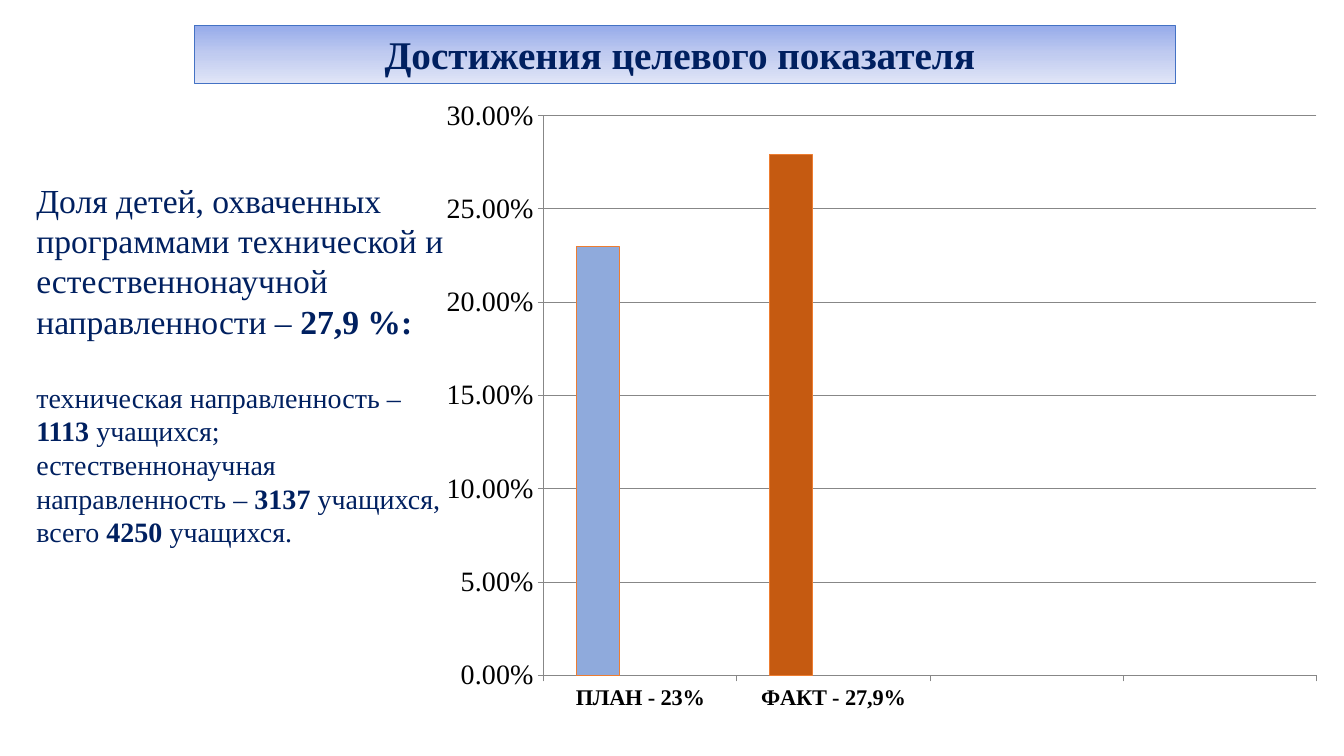
"""Builds the slide comparing the planned and actual share of children in technical programmes."""
from copy import deepcopy

from lxml.etree import SubElement
from pptx import Presentation
from pptx.chart.data import CategoryChartData
from pptx.dml.color import RGBColor
from pptx.enum.chart import XL_CHART_TYPE as ChartType, XL_TICK_MARK as TickMark
from pptx.enum.text import MSO_ANCHOR as Anchor, MSO_AUTO_SIZE as AutoSize, PP_ALIGN as Align
from pptx.oxml import parse_xml
from pptx.oxml.ns import nsdecls, qn
from pptx.util import Cm, Pt

SERIF = "Times New Roman"
NAVY = "002060"


def rgb(hex_color):
    return RGBColor.from_string(hex_color)


def style(font, size, color, bold=False):
    font.name, font.size, font.bold = SERIF, Pt(size), bold
    font.color.rgb = rgb(color)


deck = Presentation()
deck.slide_width, deck.slide_height = Cm(33.87), Cm(19.05)
slide = deck.slides.add_slide(deck.slide_layouts[1])
heading, summary = slide.placeholders

heading.left, heading.top, heading.width, heading.height = Cm(4.9), Cm(0.64), Cm(24.71), Cm(1.45)
heading.fill.gradient()
heading.fill.gradient_angle = 270
stop_list = heading.element.spPr.find(".//" + qn("a:gsLst"))
stop_list.insert(1, deepcopy(stop_list[0]))
for stop, position, color in zip(heading.fill.gradient_stops, (0, 0.5, 1), ("96ABEA", "C0CBF0", "E0E5F7")):
    stop.position = position
    stop.color.rgb = rgb(color)
heading.line.color.rgb = rgb("4472C4")
heading.line.width = Pt(0.5)
heading.text_frame.text = "Достижения целевого показателя "
heading.text_frame.auto_size = AutoSize.NONE
heading.text_frame.vertical_anchor = Anchor.MIDDLE
heading.text_frame.paragraphs[0].alignment = Align.CENTER
style(heading.text_frame.paragraphs[0].runs[0].font, 28, NAVY, True)

summary.left, summary.top, summary.width, summary.height = Cm(0.66), Cm(4.4), Cm(11.33), Cm(9.65)
summary.text_frame.auto_size = AutoSize.NONE
summary.text_frame.word_wrap = True
summary_lines = [
    (24, 0, [("Доля детей, охваченных программами технической и естественнонаучной направленности – ", False),
             ("27,9 %:", True)]),
    (20, 28, [("техническая направленность –", False)]),
    (20, 0, [("1113 ", True), ("учащихся;", False)]),
    (20, 0, [("естественнонаучная направленность – ", False), ("3137", True), (" учащихся,", False)]),
    (20, 0, [("всего ", False), ("4250", True), (" учащихся.", False)]),
]
for index, (size, gap_before, pieces) in enumerate(summary_lines):
    line = summary.text_frame.paragraphs[0] if index == 0 else summary.text_frame.add_paragraph()
    line.space_before = Pt(gap_before)
    indents = line._p.get_or_add_pPr()
    indents.set("marL", "0")
    indents.set("indent", "0")
    SubElement(indents, qn("a:buNone"))
    for words, bold in pieces:
        piece = line.add_run()
        piece.text = words
        style(piece.font, size, NAVY, bold)

shares = CategoryChartData(number_format="0.00%")
shares.categories = ["ПЛАН - 23%", "ФАКТ - 27,9%", "", ""]
shares.add_series("Series 1", (0.23, 0.279, None, None))
shares.add_series("Series 2", (None,) * 4)
shares.add_series("Series 3", (None,) * 4)
chart = slide.shapes.add_chart(
    ChartType.COLUMN_CLUSTERED, Cm(11.02), Cm(2.44), Cm(22.38), Cm(15.85), shares).chart
chart.has_legend = False
chart.has_title = False
chart.font.name, chart.font.size = "Calibri", Pt(18)
chart.font.color.rgb = rgb("000000")

columns = chart.plots[0]
columns.gap_width, columns.overlap = 150, 0
columns.vary_by_categories = False
for series, color in zip(columns.series, ("BDD7EE", "ED7D31", "A5A5A5")):
    series.format.fill.solid()
    series.format.fill.fore_color.rgb = rgb(color)
for index, color in enumerate(("8FAADC", "C55A11")):
    bar = columns.series[0].points[index].format
    bar.fill.solid()
    bar.fill.fore_color.rgb = rgb(color)
    bar.line.color.rgb = rgb("ED7D31")
    bar.line.width = Pt(0.5)

share_axis = chart.value_axis
share_axis.minimum_scale, share_axis.maximum_scale, share_axis.major_unit = 0, 0.3, 0.05
share_axis.tick_labels.number_format = "0.00%"
share_axis.tick_labels.number_format_is_linked = False
share_axis.has_major_gridlines = True
for axis, size, bold in ((chart.category_axis, 16, True), (share_axis, 20, False)):
    axis.major_tick_mark = TickMark.OUTSIDE
    style(axis.tick_labels.font, size, "000000", bold)
for rule in (chart.category_axis.format.line, share_axis.format.line, share_axis.major_gridlines.format.line):
    rule.color.rgb = rgb("878787")
    rule.width = Pt(0.75)

plot_area = chart._chartSpace.chart.plotArea
for automatic_layout in plot_area.findall(qn("c:layout")):
    plot_area.remove(automatic_layout)
plot_area.insert(0, parse_xml(
    f'<c:layout {nsdecls("c")}><c:manualLayout><c:layoutTarget val="inner"/>'
    '<c:xMode val="edge"/><c:yMode val="edge"/><c:x val="0.12"/><c:y val="0.03"/>'
    '<c:w val="0.87"/><c:h val="0.89"/></c:manualLayout></c:layout>'))

deck.save("out.pptx")
